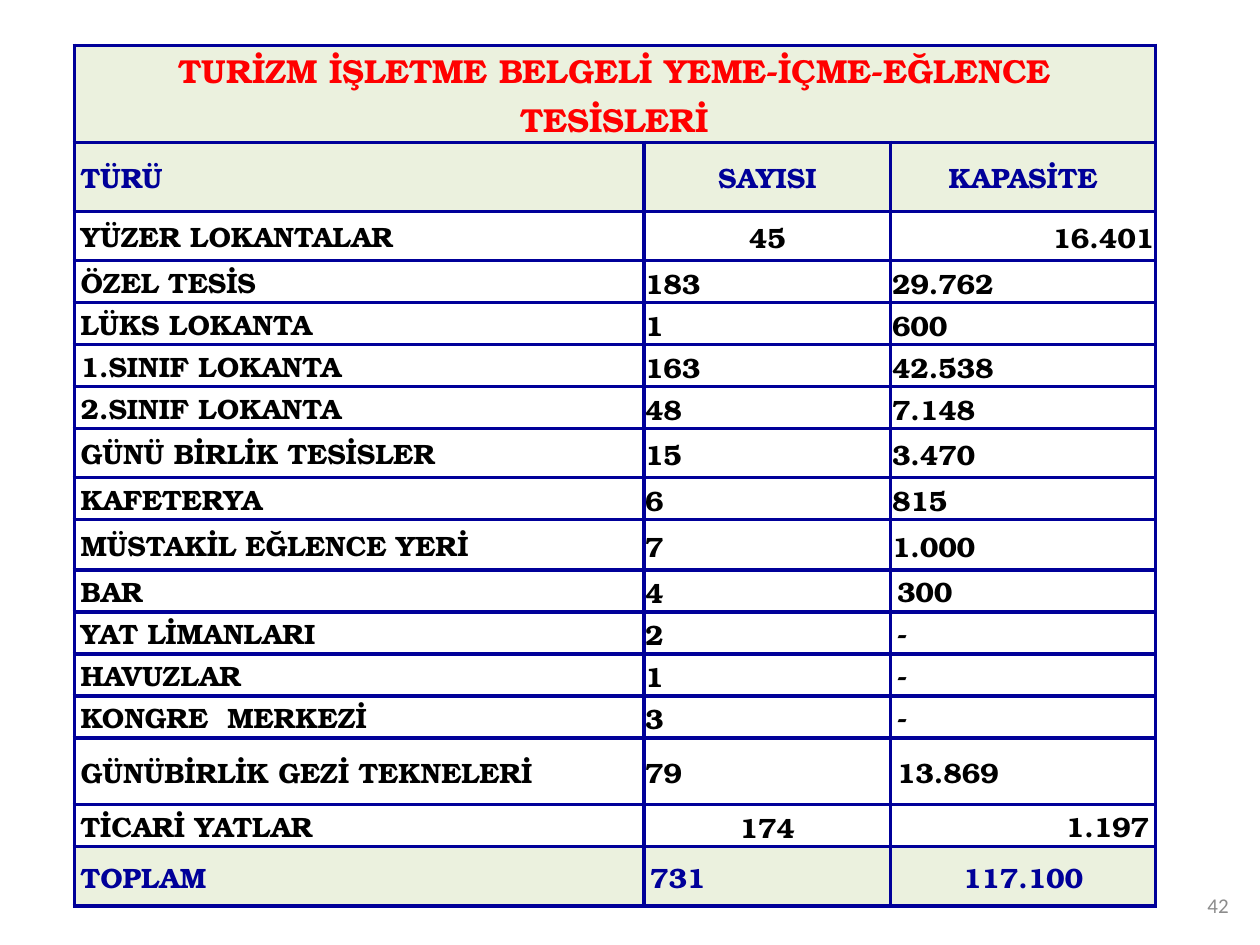
from dataclasses import dataclass

from lxml.etree import SubElement
from pptx import Presentation
from pptx.dml.color import RGBColor
from pptx.enum.text import MSO_ANCHOR, PP_ALIGN
from pptx.oxml.ns import qn
from pptx.util import Inches, Pt

COLORS = {
    "navy": "000099",
    "red": "FF0000",
    "black": "000000",
    "white": "FFFFFF",
    "pale green": "EBF1DE",
    "grey": "8C8C8C",
}
TABLE_FONT = "TeX Gyre Bonum"
BORDER_WIDTH = Pt(2.25)
LINE_HEIGHT = 1 / 3  # inches, a row holding one line of text
LEFT, CENTER, RIGHT = PP_ALIGN.LEFT, PP_ALIGN.CENTER, PP_ALIGN.RIGHT


@dataclass
class Entry:
    """Text of one cell; a tight cell has almost no margins."""
    text: str
    align: PP_ALIGN = LEFT
    tight: bool = False


@dataclass
class Row:
    height: float
    entries: list[Entry]
    color: str = "black"
    fill: str = "white"
    size: int = 16


def facility(kind: str, count: str, capacity: str, height: float = LINE_HEIGHT,
             count_align: PP_ALIGN = LEFT, capacity_align: PP_ALIGN = LEFT,
             tight_capacity: bool = True) -> Row:
    return Row(height, [Entry(kind), Entry(count, count_align, True),
                        Entry(capacity, capacity_align, tight_capacity)])


COLUMN_WIDTHS = [4.52, 1.96, 2.1]
ROWS = [
    Row(0.77, [Entry("TURİZM İŞLETME BELGELİ YEME-İÇME-EĞLENCE TESİSLERİ", CENTER)],
        "red", "pale green", 19),
    Row(0.55, [Entry("TÜRÜ"), Entry("SAYISI", CENTER), Entry("KAPASİTE", CENTER)],
        "navy", "pale green"),
    facility("YÜZER LOKANTALAR", "45", "16.401", 0.39, CENTER, RIGHT),
    facility("ÖZEL TESİS", "183", "29.762"),
    facility("LÜKS LOKANTA", "1", "600"),
    facility("1.SINIF LOKANTA", "163", "42.538"),
    facility("2.SINIF LOKANTA", "48", "7.148"),
    facility("GÜNÜ BİRLİK TESİSLER", "15", "3.470", 0.39),
    facility("KAFETERYA", "6", "815"),
    facility("MÜSTAKİL EĞLENCE YERİ", "7", "1.000", 0.4),
    facility("BAR", "4", "300", tight_capacity=False),
    facility("YAT LİMANLARI", "2", "-", tight_capacity=False),
    facility("HAVUZLAR", "1", "-", tight_capacity=False),
    facility("KONGRE  MERKEZİ", "3", "-", tight_capacity=False),
    facility("GÜNÜBİRLİK GEZİ TEKNELERİ", "79", "13.869", 0.53, tight_capacity=False),
    facility("TİCARİ YATLAR", "174", "1.197", LINE_HEIGHT, CENTER, RIGHT, False),
    Row(0.47, [Entry("TOPLAM"), Entry("731"), Entry("117.100", CENTER)],
        "navy", "pale green"),
]


def format_text(paragraph, align: PP_ALIGN, font_name: str, size: int,
                color: str, bold: bool) -> None:
    paragraph.alignment = align
    for run in paragraph.runs:
        run.font.name = font_name
        run.font.size = Pt(size)
        run.font.bold = bold
        run.font.color.rgb = RGBColor.from_string(COLORS[color])


def style_cell(cell, fill: str) -> None:
    """Draw the four borders, then the fill, in schema order."""
    properties = cell._tc.get_or_add_tcPr()
    for side in ("a:lnL", "a:lnR", "a:lnT", "a:lnB"):
        line = SubElement(properties, qn(side), w=str(BORDER_WIDTH))
        solid = SubElement(line, qn("a:solidFill"))
        SubElement(solid, qn("a:srgbClr"), val=COLORS["navy"])
    cell.fill.solid()
    cell.fill.fore_color.rgb = RGBColor.from_string(COLORS[fill])


def write_cell(cell, entry: Entry, row: Row) -> None:
    cell.text_frame.text = entry.text
    cell.vertical_anchor = MSO_ANCHOR.MIDDLE
    cell.margin_left = cell.margin_right = Inches(0.01 if entry.tight else 0.05)
    cell.margin_top = Inches(0.01 if entry.tight else 0)
    cell.margin_bottom = 0
    format_text(cell.text_frame.paragraphs[0], entry.align, TABLE_FONT,
                row.size, row.color, True)


def add_facilities_table(slide) -> None:
    table = slide.shapes.add_table(
        len(ROWS), len(COLUMN_WIDTHS), Inches(0.59), Inches(0.36),
        Inches(sum(COLUMN_WIDTHS)), Inches(sum(row.height for row in ROWS))).table
    table.first_row = table.horz_banding = False
    for column, width in zip(table.columns, COLUMN_WIDTHS):
        column.width = Inches(width)
    for index, row in enumerate(ROWS):
        table.rows[index].height = Inches(row.height)
        for cell in table.rows[index].cells:
            style_cell(cell, row.fill)
        for column_index, entry in enumerate(row.entries):
            write_cell(table.cell(index, column_index), entry, row)
    # The heading spans all columns
    table.cell(0, 0).merge(table.cell(0, len(COLUMN_WIDTHS) - 1))


def add_page_number(slide, number: str) -> None:
    frame = slide.shapes.add_textbox(
        Inches(7.52), Inches(6.98), Inches(2.33), Inches(0.4)).text_frame
    frame.word_wrap = True
    frame.vertical_anchor = MSO_ANCHOR.MIDDLE
    frame.text = number
    format_text(frame.paragraphs[0], RIGHT, "Calibri", 12, "grey", False)


def main() -> None:
    presentation = Presentation()
    presentation.slide_width = Inches(10)
    presentation.slide_height = Inches(7.5)
    slide = presentation.slides.add_slide(presentation.slide_layouts[6])
    add_page_number(slide, "42")
    add_facilities_table(slide)
    presentation.save("out.pptx")


if __name__ == "__main__":
    main()
